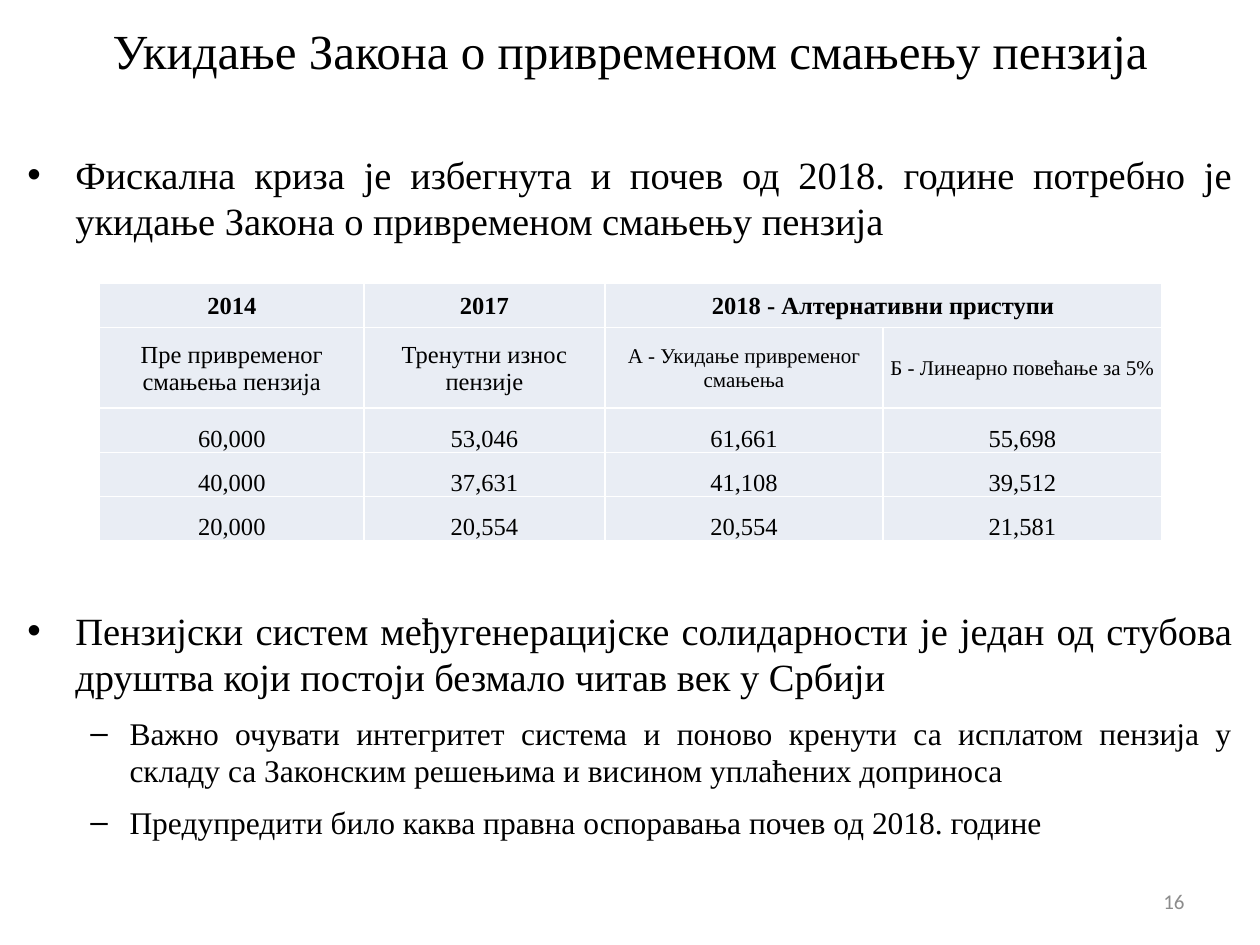
from dataclasses import dataclass

from lxml.etree import SubElement
from pptx import Presentation
from pptx.dml.color import RGBColor as Rgb
from pptx.enum.text import MSO_ANCHOR as Anchor, PP_ALIGN as Align
from pptx.oxml.ns import qn
from pptx.util import Inches, Pt


@dataclass(frozen=True)
class Theme:
    """Colours, fonts and type sizes of the slide."""

    ink: str = "000000"
    muted: str = "8C8C8C"
    cell: str = "E9EDF4"
    rule: str = "FFFFFF"
    serif: str = "Times New Roman"
    sans: str = "Calibri"
    title: int = 28
    point: int = 22
    detail: int = 18
    table: int = 14
    small: int = 12


THEME = Theme()
COLUMNS, ROWS = 100, 75
BULLETS = {
    0: {"mark": "•", "margin": 3.8, "hang": 3.8, "size": THEME.point},
    1: {"mark": "–", "margin": 8.1, "hang": 3.1, "size": THEME.detail},
}
OPENING = [(0, "Фискална криза је избегнута и почев од 2018. године потребно је "
               "укидање Закона о привременом смањењу пензија")]
CLOSING = [
    (0, "Пензијски систем међугенерацијске солидарности је један од стубова "
        "друштва који постоји безмало читав век у Србији"),
    (1, "Важно очувати интегритет система и поново кренути са исплатом пензија у "
        "складу са Законским решењима и висином уплаћених доприноса"),
    (1, "Предупредити било каква правна оспоравања почев од 2018. године"),
]
PENSIONS = [
    ["2014", "2017", "2018 - Алтернативни приступи", ""],
    ["Пре привременог смањења пензија", "Тренутни износ пензије",
     "А - Укидање привременог смањења", "Б - Линеарно повећање за 5%"],
    ["60,000", "53,046", "61,661", "55,698"],
    ["40,000", "37,631", "41,108", "39,512"],
    ["20,000", "20,554", "20,554", "21,581"],
]
PENSION_COLUMNS = [21, 19.1, 22.1, 22.1]
PENSION_ROWS = [3.5, 6.4, 3.5, 3.5, 3.5]


def grid(count):
    """Length of a number of grid units, each a hundredth of the slide's width."""
    return Inches(count / 10)


def apply(target, values):
    """Set each named value on the target."""
    for name, value in values.items():
        setattr(target, name, value)


def write(paragraph, text, size, align, font=THEME.serif, color=THEME.ink, bold=False):
    """Put one formatted run into a paragraph."""
    paragraph.alignment = align
    run = paragraph.add_run()
    run.text = text
    apply(run.font, {"name": font, "size": Pt(size), "bold": bold})
    run.font.color.rgb = Rgb.from_string(color)


def add_frame(slide, area, anchor):
    """Add a wrapping text box and return its text frame."""
    frame = slide.shapes.add_textbox(*map(grid, area)).text_frame
    apply(frame, {"word_wrap": True, "vertical_anchor": anchor})
    return frame


def add_line(slide, area, text, size, align, **look):
    """Add a single line of text centred vertically in its area."""
    frame = add_frame(slide, area, Anchor.MIDDLE)
    write(frame.paragraphs[0], text, size, align, **look)


def add_points(slide, area, points, gap):
    """Add justified bullet points at their levels."""
    frame = add_frame(slide, area, Anchor.TOP)
    for index, (level, text) in enumerate(points):
        paragraph = frame.add_paragraph() if index else frame.paragraphs[0]
        bullet = BULLETS[level]
        write(paragraph, text, bullet["size"], Align.JUSTIFY)
        apply(paragraph, {"level": level, "space_before": Pt(gap), "space_after": Pt(gap)})
        properties = paragraph._p.get_or_add_pPr()
        properties.set("marL", str(grid(bullet["margin"])))
        properties.set("indent", str(-grid(bullet["hang"])))
        SubElement(properties, qn("a:buFont"), typeface="Arial")
        SubElement(properties, qn("a:buChar"), char=bullet["mark"])


def add_borders(cell):
    """Draw a thin rule on all four sides of a cell."""
    properties = cell._tc.get_or_add_tcPr()
    for position, side in enumerate(("lnL", "lnR", "lnT", "lnB")):
        line = SubElement(properties, qn(f"a:{side}"), w=str(Pt(1)))
        fill = SubElement(line, qn("a:solidFill"))
        SubElement(fill, qn("a:srgbClr"), val=THEME.rule)
        properties.insert(position, line)


def fill_cell(cell, text, size, anchor, bold):
    """Give a table cell its fill, rules and centred text."""
    apply(cell, {"vertical_anchor": anchor, "margin_left": grid(0.1),
                 "margin_right": grid(0.1), "margin_top": grid(0.1), "margin_bottom": 0})
    cell.fill.solid()
    cell.fill.fore_color.rgb = Rgb.from_string(THEME.cell)
    add_borders(cell)
    write(cell.text_frame.paragraphs[0], text, size, Align.CENTER, bold=bold)


def add_pensions(slide, left, top):
    """Add the table that compares pension amounts."""
    area = left, top, sum(PENSION_COLUMNS), sum(PENSION_ROWS)
    table = slide.shapes.add_table(
        len(PENSION_ROWS), len(PENSION_COLUMNS), *map(grid, area)).table
    apply(table, {"first_row": False, "horz_banding": False})
    for column, width in zip(table.columns, PENSION_COLUMNS):
        column.width = grid(width)
    for row, height in zip(table.rows, PENSION_ROWS):
        row.height = grid(height)
    table.cell(0, 2).merge(table.cell(0, 3))
    for r, texts in enumerate(PENSIONS):
        for c, text in enumerate(texts):
            size = THEME.small if r == 1 and c >= 2 else THEME.table
            anchor = Anchor.MIDDLE if r < 2 else Anchor.BOTTOM
            fill_cell(table.cell(r, c), text, size, anchor, bold=r == 0)


def main():
    """Build and save the slide."""
    deck = Presentation()
    apply(deck, {"slide_width": grid(COLUMNS), "slide_height": grid(ROWS)})
    slide = deck.slides.add_slide(deck.slide_layouts[6])
    add_line(slide, (0, 0, COLUMNS, 7.9), "Укидање Закона о привременом смањењу пензија",
             THEME.title, Align.CENTER)
    add_points(slide, (1.2, 11.5, 97.6, 9), OPENING, gap=6)
    add_pensions(slide, 7.9, 22.5)
    add_points(slide, (1.2, 47.7, 97.6, 20), CLOSING, gap=4)
    add_line(slide, (71.7, 69.5, 23.3, 4), "16", THEME.small, Align.RIGHT,
             font=THEME.sans, color=THEME.muted)
    deck.save("out.pptx")


if __name__ == "__main__":
    main()
